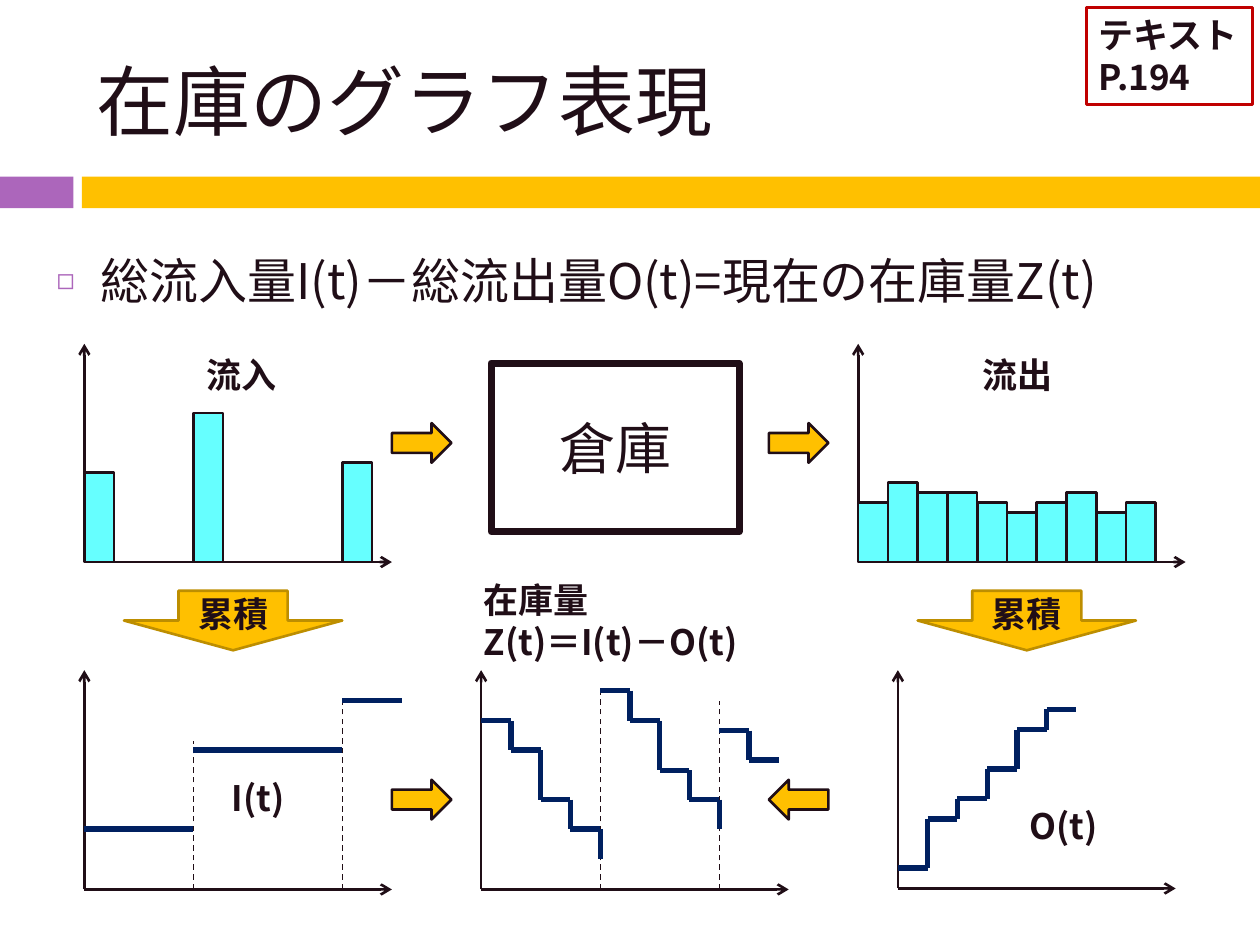
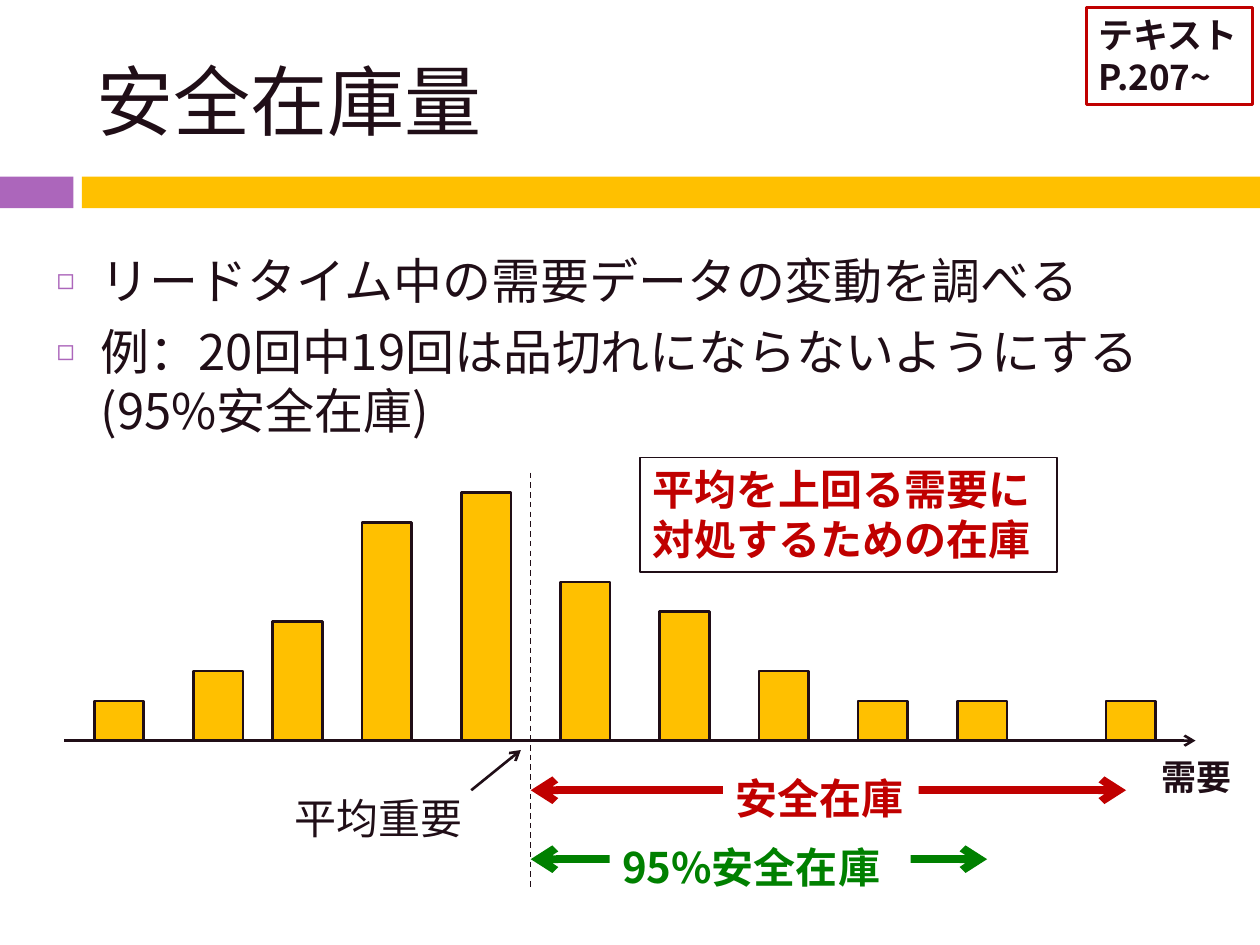
import itertools

import lxml.etree
import pptx
import pptx.dml.color
import pptx.enum.dml
import pptx.enum.shapes
import pptx.enum.text
import pptx.oxml.ns
import pptx.util

Cm, Pt = pptx.util.Cm, pptx.util.Pt
RGBColor = pptx.dml.color.RGBColor
qn = pptx.oxml.ns.qn
Preset = pptx.enum.shapes.MSO_SHAPE
Align = pptx.enum.text.PP_ALIGN
Anchor = pptx.enum.text.MSO_ANCHOR
DASH = pptx.enum.dml.MSO_LINE.DASH

INK = RGBColor(0x20, 0x0E, 0x17)
PURPLE = RGBColor(0xAC, 0x66, 0xBB)
GOLD = RGBColor(0xFF, 0xC0, 0x00)
DARK_GOLD = RGBColor(0xBD, 0x8E, 0x00)
CYAN = RGBColor(0x66, 0xFF, 0xFF)
NAVY = RGBColor(0x00, 0x20, 0x60)
RED = RGBColor(0xC0, 0x00, 0x00)
GREEN = RGBColor(0x00, 0x80, 0x00)
WHITE = RGBColor(0xFF, 0xFF, 0xFF)
FONT = "Noto Sans CJK JP"


def write(shape, text, size=20, color=INK, bold=True, font=FONT,
          align=Align.LEFT, anchor=Anchor.TOP, wrap=False, space_before=0):
    """Fill a shape with one paragraph per line of text."""
    frame = shape.text_frame
    frame.text = text
    frame.word_wrap = wrap
    frame.vertical_anchor = anchor
    for paragraph in frame.paragraphs:
        paragraph.alignment = align
        paragraph.space_before = Pt(space_before)
        for run in paragraph.runs:
            run.font.size = Pt(size)
            run.font.bold = bold
            run.font.name = font
            run.font.color.rgb = color
    for latin in shape.element.iter(qn("a:latin")):
        east_asian = lxml.etree.Element(qn("a:ea"), typeface=FONT)
        latin.addnext(east_asian)


def draw_line(slide, x1, y1, x2, y2, color=INK, weight=1.5, dash=None, arrows=()):
    """Draw a straight line in cm; arrows holds "headEnd" and/or "tailEnd"."""
    line = slide.shapes.add_connector(
        pptx.enum.shapes.MSO_CONNECTOR.STRAIGHT, Cm(x1), Cm(y1), Cm(x2), Cm(y2))
    line.line.color.rgb = color
    line.line.width = Pt(weight)
    if dash:
        line.line.dash_style = dash
    outline = line.line._get_or_add_ln()
    for end in arrows:
        lxml.etree.SubElement(outline, qn("a:" + end), type="arrow")
    lxml.etree.SubElement(outline.getparent(), qn("a:effectLst"))


presentation = pptx.Presentation()
presentation.slide_width = Cm(25.4)
presentation.slide_height = Cm(19.05)
layout = presentation.slide_layouts[1]

# Shared title and list areas
areas = [(1.7, 0.64, 22.66, 2.74), (0.89, 4.93, 23.8, 13.59)]
for index, (left, top, width, height) in enumerate(areas):
    area = layout.placeholders[index]
    area.left, area.top, area.width, area.height = Cm(left), Cm(top), Cm(width), Cm(height)

# Titles, lists and page references
contents = [
    ("在庫のグラフ表現", "総流入量I(t)－総流出量O(t)=現在の在庫量Z(t)", "テキスト\nP.194"),
    ("安全在庫量",
     "リードタイム中の需要データの変動を調べる\n"
     "例：20回中19回は品切れにならないようにする(95%安全在庫)", "テキスト\nP.207~"),
]
slides = []
boxes = []  # slide, preset (None: text box), place, fill, outline, weight, text, format
for title, points, reference in contents:
    slide = presentation.slides.add_slide(layout)
    slides.append(slide)
    write(slide.shapes.title, title, size=44, bold=False, anchor=Anchor.MIDDLE, wrap=True)
    body = slide.placeholders[1]
    write(body, points, size=28, bold=False, wrap=True, space_before=7)
    for paragraph in body.element.iter(qn("a:p")):
        properties = paragraph.get_or_add_pPr()
        properties.set("marL", str(Cm(0.89)))
        properties.set("indent", str(-Cm(0.89)))
        bullet_color = lxml.etree.SubElement(properties, qn("a:buClr"))
        lxml.etree.SubElement(bullet_color, qn("a:srgbClr"), val=str(PURPLE))
        lxml.etree.SubElement(properties, qn("a:buSzPct"), val="60000")
        lxml.etree.SubElement(properties, qn("a:buChar"), char="◻")
    boxes.append((slide, None, (21.9, 0.15, 3.35, 1.96), None, RED, 1.75, reference, {}))
graphs, safety = slides

# Bands belong to the layout, so both slides inherit them
for left, width, color in [(0, 1.48, PURPLE), (1.65, 23.75, GOLD)]:
    band = graphs.shapes.add_shape(Preset.RECTANGLE, Cm(left), Cm(3.56), Cm(width), Cm(0.64))
    band.shadow.inherit = False
    band.fill.solid()
    band.fill.fore_color.rgb = color
    band.line.fill.background()
    layout.shapes.element.append(band.element)

# Graph axes: origin, end of the time axis, top of the quantity axis
FLOW_BASE, STOCK_BASE = 11.33, 17.93
STEP = 0.6
axes = [(1.7, FLOW_BASE, 7.9, 6.93), (17.3, FLOW_BASE, 23.9, 6.93),
        (1.7, STOCK_BASE, 7.9, 13.51), (9.7, STOCK_BASE, 15.9, 13.51),
        (18.1, STOCK_BASE - 0.02, 23.7, 13.51)]
for x, base, end, top in axes:
    draw_line(graphs, x, base, x, top, arrows=["tailEnd"])
    draw_line(graphs, x, base, end, base, arrows=["tailEnd"])

# Deliveries raise the cumulative inflow and the stock
for x, top in [(3.9, 14.93), (6.9, 14.13), (12.1, 13.92), (14.5, 14.13)]:
    draw_line(graphs, x, STOCK_BASE, x, top, weight=0.79, dash=DASH)
for start, end, level in [(1.7, 3.9, 16.71), (3.9, 6.9, 15.12), (6.9, 8.1, 14.12)]:
    draw_line(graphs, start, level, end, level, NAVY, 3)

# Staircases: start, level of each tread, level where the last riser stops
stairs = [(18.1, [17.5, 16.51, 16.1, 15.5, 14.71, 14.3], None),
          (9.7, [14.53, 15.12, 16.12, 16.71], 17.32),
          (12.1, [13.92, 14.53, 15.53, 16.12], 16.71),
          (14.5, [14.73, 15.32], None)]
for start, levels, last in stairs:
    for i, (level, following) in enumerate(itertools.zip_longest(levels, levels[1:])):
        x = start + i * STEP
        riser_end = following or last
        draw_line(graphs, x, level, x + STEP, level, NAVY, 3)
        if riser_end:
            draw_line(graphs, x + STEP, level, x + STEP, riser_end, NAVY, 3)

# Bars: slide, base, width, fill, (left, height) pairs
outflow = [1.2, 1.6, 1.4, 1.4, 1.2, 1.0, 1.2, 1.4, 1.0, 1.2]
DEMAND_BASE = 14.93
histograms = [
    (graphs, FLOW_BASE, STEP, CYAN, [(1.7, 1.8), (3.9, 3), (6.9, 2)]),
    (graphs, FLOW_BASE, STEP, CYAN,
     [(17.3 + i * STEP, height) for i, height in enumerate(outflow)]),
    (safety, DEMAND_BASE, 1, GOLD,
     [(1.9, 0.8), (3.9, 1.4), (5.5, 2.4), (7.3, 4.4), (9.3, 5), (11.3, 3.2),
      (13.3, 2.6), (15.3, 1.4), (17.3, 0.8), (19.3, 0.8), (22.3, 0.8)]),
]
for slide, base, width, color, bars in histograms:
    for left, height in bars:
        boxes.append((slide, Preset.RECTANGLE, (left, base - height, width, height),
                      color, INK, 1.5, "", {}))

# Demand axis, average and safety stock ranges
draw_line(safety, 1.3, DEMAND_BASE, 24.1, DEMAND_BASE, arrows=["tailEnd"])
draw_line(safety, 10.7, 9.53, 10.7, 17.93, weight=0.79, dash=DASH)
draw_line(safety, 9.5, 15.93, 10.5, 15.12, arrows=["tailEnd"])
for y, end, color in [(15.93, 22.7, RED), (17.32, 19.9, GREEN)]:
    draw_line(safety, 10.7, y, end, y, color, 4.5, arrows=["headEnd", "tailEnd"])

# Warehouse, flow arrows and labels
centred = {"align": Align.CENTER, "anchor": Anchor.MIDDLE, "wrap": True}
for x, y in [(7.9, 8.53), (15.5, 8.53), (7.9, 15.72)]:
    boxes.append((graphs, Preset.RIGHT_ARROW, (x, y, 1.2, 0.8), GOLD, INK, 1.5, "", {}))
for x in (2.5, 18.5):
    boxes.append((graphs, Preset.DOWN_ARROW, (x, 11.91, 4.4, 1.2), GOLD, DARK_GOLD, 1.5,
                  "累積", centred))
boxes += [
    (graphs, Preset.LEFT_ARROW, (15.5, 15.72, 1.2, 0.8), GOLD, INK, 1.5, "", {}),
    (graphs, Preset.RECTANGLE, (9.9, 7.32, 5, 3.4), None, INK, 4, "倉庫",
     {"size": 32, "bold": False, "font": "Calibri", **centred}),
    (safety, None, (12.9, 9.22, 8.41, 2.31), WHITE, INK, 0.75,
     "平均を上回る需要に対処するための在庫", {"size": 24, "color": RED, "wrap": True}),
]
labels = [
    (graphs, (3.91, 7.01, 1.93, 1.11), None, "流入", {}),
    (graphs, (19.56, 7.01, 1.93, 1.11), None, "流出", {}),
    (graphs, (4.42, 15.52, 1.88, 1.11), None, "I(t)", {}),
    (graphs, (20.5, 16.1, 2.08, 1.11), None, "O(t)", {}),
    (graphs, (9.5, 11.53, 6.38, 1.96), None, "在庫量\nZ(t)＝I(t)－O(t)", {}),
    (safety, (23.16, 15.11, 1.93, 1.11), None, "需要", {}),
    (safety, (5.69, 15.85, 3.94, 1.28), None, "平均重要", {"size": 24, "bold": False}),
    (safety, (14.58, 15.44, 3.94, 1.28), WHITE, "安全在庫", {"size": 24, "color": RED}),
    (safety, (12.29, 16.84, 6.07, 1.28), WHITE, "95%安全在庫", {"size": 24, "color": GREEN}),
]
for slide, place, fill, text, text_format in labels:
    boxes.append((slide, None, place, fill, None, 0, text, text_format))

for slide, preset, place, fill, outline, weight, text, text_format in boxes:
    corners = [Cm(length) for length in place]
    if preset is None:
        box = slide.shapes.add_textbox(*corners)
    else:
        box = slide.shapes.add_shape(preset, *corners)
        box.shadow.inherit = False
    if fill is None:
        box.fill.background()
    else:
        box.fill.solid()
        box.fill.fore_color.rgb = fill
    if outline is None:
        box.line.fill.background()
    else:
        box.line.color.rgb = outline
        box.line.width = Pt(weight)
    if text:
        write(box, text, **text_format)
    if preset is None:
        box.text_frame.auto_size = pptx.enum.text.MSO_AUTO_SIZE.SHAPE_TO_FIT_TEXT

presentation.save("out.pptx")
